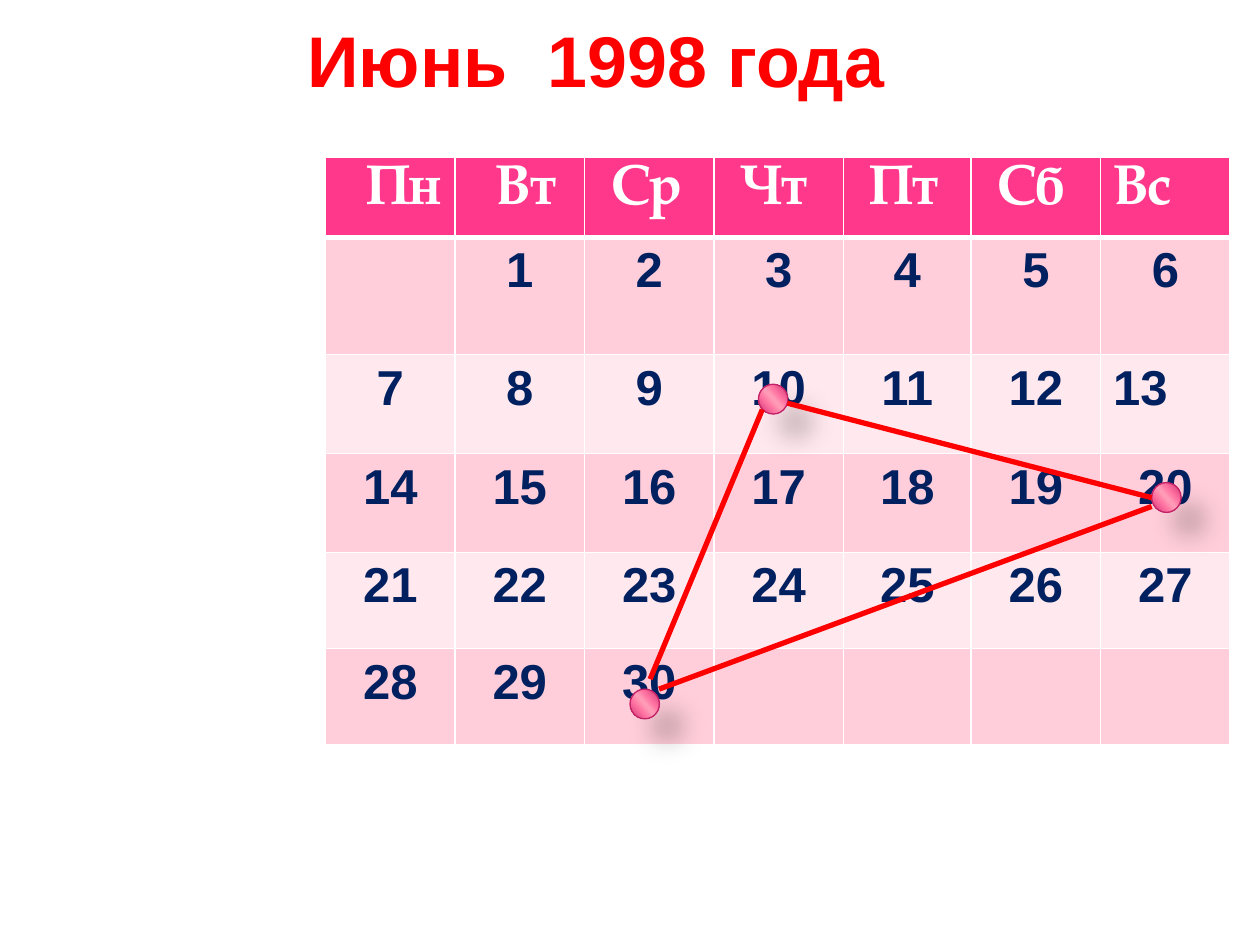
from dataclasses import dataclass

import pptx
import pptx.dml.color
import pptx.enum.shapes
import pptx.enum.text
import pptx.oxml
import pptx.oxml.ns
import pptx.util
from lxml import etree

Pt = pptx.util.Pt
RGBColor = pptx.dml.color.RGBColor
Align = pptx.enum.text.PP_ALIGN
qn = pptx.oxml.ns.qn

RED = RGBColor(0xFF, 0x00, 0x00)
WHITE = RGBColor(0xFF, 0xFF, 0xFF)
NAVY = RGBColor(0x00, 0x20, 0x60)
HEADER_PINK = RGBColor(0xFF, 0x38, 0x8C)
BAND_DARK = RGBColor(0xFF, 0xCE, 0xDA)
BAND_LIGHT = RGBColor(0xFF, 0xE8, 0xEE)
DOT_LINE = RGBColor(0xC1, 0x21, 0x65)
DOT_EDGE = RGBColor(0xCC, 0x2D, 0x70)
DOT_MID = RGBColor(0xFF, 0x73, 0xA2)
DOT_SHINE = RGBColor(0xFF, 0x9A, 0xB7)
DOT_STOPS = [(0, DOT_EDGE), (33, DOT_MID), (47, DOT_SHINE),
             (53, DOT_SHINE), (68, DOT_MID), (100, DOT_EDGE)]

COL_WIDTHS = [74, 74, 74, 74, 73, 74, 74]
ROW_HEIGHTS = [44.6, 67, 56.5, 56.5, 55, 55]
FIRST_WEEKDAY, LAST_DAY = 1, 30
MARGIN, HEADER_SPACE = 7.2, 8


@dataclass
class Weekday:
    name: str
    indent: int


@dataclass
class Dot:
    x: float
    y: float


@dataclass
class Side:
    x1: float
    y1: float
    x2: float
    y2: float


WEEKDAYS = [Weekday("Пн", 2), Weekday("Вт", 2), Weekday("Ср", 1), Weekday("Чт", 1),
            Weekday("Пт", 1), Weekday("Сб", 1), Weekday("Вс", 0)]
DOTS = [Dot(433.4, 219.6), Dot(658.1, 275.8), Dot(360, 393.8)]
SIDES = [Side(376.6, 393.8, 658.1, 289.4), Side(435.6, 234, 371.5, 388.1),
         Side(450, 230.4, 658.1, 284.4)]


def style(p, font: str, size: float, color: RGBColor, align: Align) -> None:
    p.alignment = align
    p.font.name, p.font.size, p.font.bold = font, Pt(size), True
    p.font.color.rgb = color


def add_title(s) -> None:
    tf = s.shapes.add_textbox(Pt(16.6), Pt(0), Pt(648), Pt(67.7)).text_frame
    tf.word_wrap = True
    tf.vertical_anchor = pptx.enum.text.MSO_ANCHOR.MIDDLE
    p = tf.paragraphs[0]
    for text in ("Июнь", " ", "1998 года"):
        r = p.add_run()
        r.text = text
        if text == " ":
            r._r.get_or_add_rPr().set("spc", "1140")
    style(p, "Arial", 41, RED, Align.CENTER)


def add_borders(cell, bottom: float) -> None:
    for side, width in (("L", 1), ("R", 1), ("T", 1), ("B", bottom)):
        ln = etree.SubElement(cell._tc.get_or_add_tcPr(), qn(f"a:ln{side}"), w=str(Pt(width)))
        fill = etree.SubElement(ln, qn("a:solidFill"))
        etree.SubElement(fill, qn("a:srgbClr"), val=str(WHITE))


def fill_cell(cell, color: RGBColor, bottom: float = 1) -> None:
    add_borders(cell, bottom)
    cell.fill.solid()
    cell.fill.fore_color.rgb = color


def add_calendar(s) -> None:
    table = s.shapes.add_table(len(ROW_HEIGHTS), len(COL_WIDTHS), Pt(186), Pt(90),
                               Pt(sum(COL_WIDTHS)), Pt(sum(ROW_HEIGHTS))).table
    for col, width in zip(table.columns, COL_WIDTHS):
        col.width = Pt(width)
    for row, height in zip(table.rows, ROW_HEIGHTS):
        row.height = Pt(height)
    for c, weekday in enumerate(WEEKDAYS):
        cell = table.cell(0, c)
        fill_cell(cell, HEADER_PINK, 3)
        cell.margin_left = Pt(MARGIN + HEADER_SPACE * weekday.indent)
        cell.margin_right = Pt(0)
        cell.text = weekday.name
        style(cell.text_frame.paragraphs[0], "TeX Gyre Pagella", 32, WHITE, Align.LEFT)
        for week in range(1, len(ROW_HEIGHTS)):
            cell = table.cell(week, c)
            fill_cell(cell, BAND_DARK if week % 2 else BAND_LIGHT)
            day = (week - 1) * len(WEEKDAYS) + c + 1 - FIRST_WEEKDAY
            if 1 <= day <= LAST_DAY:
                cell.text = str(day)
                align = Align.LEFT if day == 13 else Align.CENTER
                style(cell.text_frame.paragraphs[0], "Arial", 28, NAVY, align)


def add_dot(s, dot: Dot) -> None:
    sp = s.shapes.add_shape(pptx.enum.shapes.MSO_SHAPE.FLOWCHART_CONNECTOR,
                            Pt(dot.x), Pt(dot.y), Pt(16.8), Pt(17))
    sp.fill.gradient()
    sp.fill.gradient_angle = 360 - 139
    stops = sp._element.spPr.find(qn("a:gradFill")).find(qn("a:gsLst"))
    for old in list(stops):
        stops.remove(old)
    for position, color in DOT_STOPS:
        gs = etree.SubElement(stops, qn("a:gs"), pos=str(position * 1000))
        etree.SubElement(gs, qn("a:srgbClr"), val=str(color))
    sp.line.color.rgb = DOT_LINE
    sp.line.width = Pt(0.75)
    sp.shadow.inherit = False
    effects = sp._element.spPr.find(qn("a:effectLst"))
    shadow = etree.SubElement(effects, qn("a:outerShdw"), blurRad=str(Pt(15)),
                              dist=str(Pt(18)), dir=str(45 * 60000), rotWithShape="0")
    black = etree.SubElement(shadow, qn("a:srgbClr"), val="000000")
    etree.SubElement(black, qn("a:alpha"), val="26000")


def add_side(s, side: Side) -> None:
    line = s.shapes.add_connector(pptx.enum.shapes.MSO_CONNECTOR.STRAIGHT, Pt(side.x1),
                                  Pt(side.y1), Pt(side.x2), Pt(side.y2))
    line.line.color.rgb = RED
    line.line.width = Pt(3)
    etree.SubElement(line._element.spPr, qn("a:effectLst"))


def main() -> None:
    prs = pptx.Presentation()
    prs.slide_width, prs.slide_height = Pt(720), Pt(540)
    s = prs.slides.add_slide(prs.slide_layouts[6])
    add_title(s)
    add_calendar(s)
    for dot in DOTS:
        add_dot(s, dot)
    for side in SIDES:
        add_side(s, side)
    prs.save("out.pptx")


if __name__ == "__main__":
    main()
